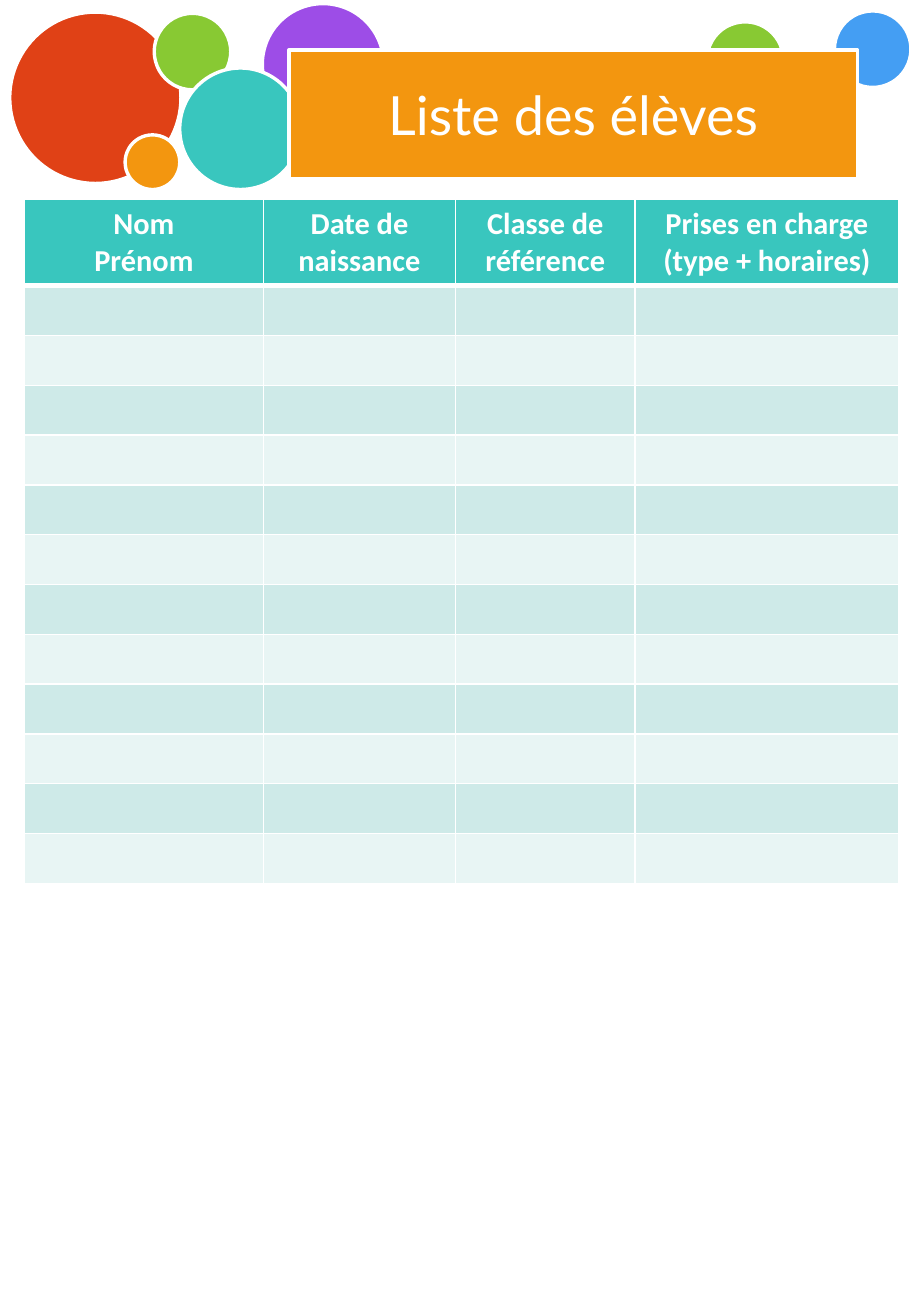
from lxml.etree import SubElement
from pptx import Presentation
from pptx.dml.color import RGBColor
from pptx.enum.shapes import MSO_SHAPE
from pptx.enum.text import MSO_ANCHOR, MSO_AUTO_SIZE, PP_ALIGN
from pptx.oxml.ns import qn
from pptx.util import Pt

EMU_PER_PX = 9144

WHITE = RGBColor(0xFF, 0xFF, 0xFF)
PURPLE = RGBColor(0x9D, 0x4D, 0xE7)
BLUE = RGBColor(0x44, 0x9E, 0xF3)
GREEN = RGBColor(0x88, 0xC9, 0x33)
RED = RGBColor(0xE0, 0x41, 0x16)
ORANGE = RGBColor(0xF3, 0x96, 0x0F)
TEAL = RGBColor(0x39, 0xC6, 0xBE)
BANDS = (RGBColor(0xCE, 0xEA, 0xE8), RGBColor(0xE8, 0xF5, 0xF4))

CIRCLES = [
    (216, 3, 100, PURPLE),
    (687, 9, 63, BLUE),
    (582, 18, 63, GREEN),
    (8, 10, 141, RED),
    (103, 111, 45, ORANGE),
    (127, 11, 63, GREEN),
    (148, 56, 100, TEAL),
]
HEADERS = [
    ["Nom", "Prénom"],
    ["Date de naissance"],
    ["Classe de référence"],
    ["Prises en charge (type + horaires)"],
]
COLUMN_WIDTHS = [197, 158, 148, 217]
PUPIL_ROWS = 12


def px(n):
    return n * EMU_PER_PX


class Page:
    title_font = "Lato"
    table_font = "Calibri"

    def __init__(self, slide):
        self.slide = slide

    def paint(self, sp, color):
        sp.fill.solid()
        sp.fill.fore_color.rgb = color
        sp.line.color.rgb = WHITE
        sp.line.width = Pt(2)

    def add_lines(self, tf, lines, font, size, bold):
        for i, line in enumerate(lines):
            p = tf.add_paragraph() if i else tf.paragraphs[0]
            p.alignment = PP_ALIGN.CENTER
            r = p.add_run()
            r.text = line
            r.font.name = font
            r.font.size = Pt(size)
            r.font.bold = bold
            r.font.color.rgb = WHITE

    def circle(self, x, y, d, color):
        sp = self.slide.shapes.add_shape(MSO_SHAPE.OVAL, px(x), px(y), px(d), px(d))
        sp.shadow.inherit = False
        self.paint(sp, color)

    def title(self, x, y, w, h, text):
        shapes = self.slide.shapes
        sp = shapes.title
        sp.left, sp.top, sp.width, sp.height = px(x), px(y), px(w), px(h)
        self.paint(sp, ORANGE)
        tf = sp.text_frame
        tf.auto_size = MSO_AUTO_SIZE.NONE
        tf.word_wrap = True
        tf.vertical_anchor = MSO_ANCHOR.MIDDLE
        self.add_lines(tf, [text], self.title_font, 32, False)
        shapes.element.append(sp.element)

    def borders(self, cell, top, bottom):
        tc_pr = cell._tc.get_or_add_tcPr()
        for i, (side, width) in enumerate(zip("LRTB", (1, 1, top, bottom))):
            ln = SubElement(tc_pr, qn(f"a:ln{side}"), w=str(Pt(width)))
            fill = SubElement(ln, qn("a:solidFill"))
            SubElement(fill, qn("a:srgbClr"), val=str(WHITE))
            tc_pr.insert(i, ln)

    def table(self, x, y, widths, headers, body_rows, header_h, row_h):
        total_h = header_h + body_rows * row_h
        table = self.slide.shapes.add_table(
            body_rows + 1, len(widths), px(x), px(y), px(sum(widths)), px(total_h)
        ).table
        for column, width in zip(table.columns, widths):
            column.width = px(width)
        for i, row in enumerate(table.rows):
            row.height = px(row_h if i else header_h)
            for cell, lines in zip(row.cells, headers):
                cell.fill.solid()
                cell.fill.fore_color.rgb = BANDS[(i - 1) % 2] if i else TEAL
                self.borders(cell, 3 if i == 1 else 1, 1 if i else 3)
                if i == 0:
                    self.add_lines(cell.text_frame, lines, self.table_font, 18, True)


def main():
    prs = Presentation()
    prs.slide_width, prs.slide_height = px(750), px(1083)
    page = Page(prs.slides.add_slide(prs.slide_layouts[5]))
    for circle in CIRCLES:
        page.circle(*circle)
    page.title(238, 41, 468, 106, "Liste des élèves")
    page.table(20, 164, COLUMN_WIDTHS, HEADERS, PUPIL_ROWS, 70, 41)
    prs.save("out.pptx")


if __name__ == "__main__":
    main()
